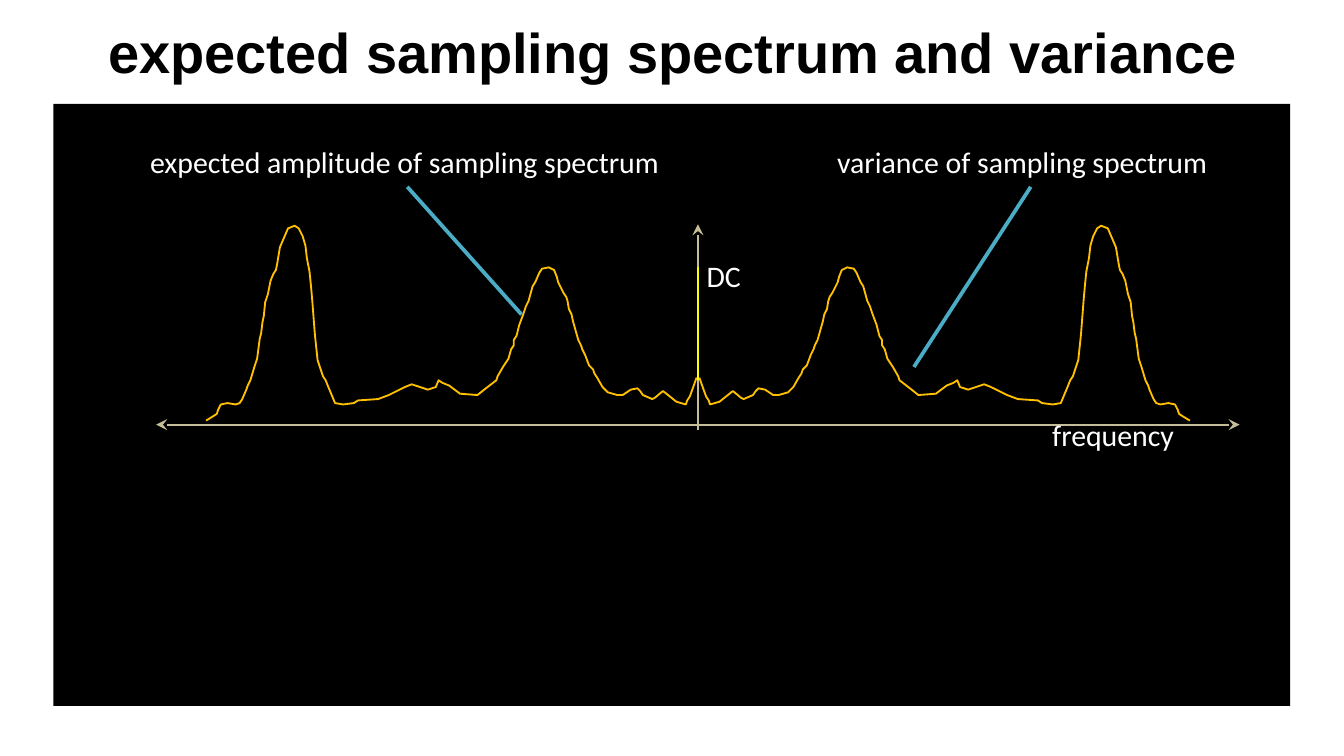
from pptx import Presentation
from pptx.dml.color import RGBColor
from pptx.enum.shapes import MSO_CONNECTOR, MSO_SHAPE
from pptx.enum.text import MSO_ANCHOR, PP_ALIGN
from pptx.oxml.ns import qn
from pptx.util import Pt
from lxml.etree import SubElement

BLACK = RGBColor(0x00, 0x00, 0x00)
WHITE = RGBColor(0xFF, 0xFF, 0xFF)
TAN = RGBColor(0xC4, 0xBD, 0x97)
AMBER = RGBColor(0xFF, 0xC0, 0x00)
YELLOW = RGBColor(0xFF, 0xFF, 0x00)
TEAL = RGBColor(0x4B, 0xAC, 0xC6)

TITLE = "expected sampling spectrum and variance"
LABELS = [
    ("expected amplitude of sampling spectrum", 73.4, 73.4, 290.2),
    ("variance of sampling spectrum", 441.4, 73.4, 222.5),
    ("frequency", 556.6, 219.6, 80.6),
    ("DC", 371.5, 134.6, 33.1),
]
POINTERS = [(218.2, 100.1, 279.4, 168.5), (552.2, 100.1, 489.6, 196.6)]

AXIS_X, BASE_Y = 373.9, 227.5
AXIS_REACH, AXIS_OVERLAP = 290.2, 5.8
UNIT = 0.72
# Distance from the axis and height above the base, in units
SPECTRUM = [
    (1, 35), (6, 21), (8, 18), (9, 15), (16, 17), (21, 21), (26, 25), (32, 20),
    (34, 19), (41, 22), (43, 25), (45, 27), (50, 26), (53, 24), (56, 22),
    (60, 22), (67, 24), (71, 28), (75, 35), (77, 38), (78, 41), (81, 44),
    (84, 52), (86, 56), (87, 59), (89, 63), (93, 77), (94, 82), (96, 86),
    (97, 92), (98, 95), (100, 98), (104, 106), (105, 110), (107, 115),
    (111, 117), (116, 116), (118, 113), (121, 106), (123, 103), (126, 92),
    (128, 88), (130, 82), (133, 74), (135, 66), (137, 63), (137, 59),
    (139, 56), (141, 49), (145, 43), (149, 36), (150, 33), (159, 26),
    (164, 22), (177, 23), (185, 29), (190, 31), (193, 33), (195, 28),
    (201, 26), (210, 29), (213, 30), (218, 28), (224, 25), (230, 22),
    (238, 19), (253, 18), (256, 16), (264, 15), (270, 16), (275, 28),
    (277, 33), (279, 36), (280, 39), (283, 48), (285, 67), (287, 93),
    (288, 104), (289, 114), (291, 124), (292, 133), (294, 140), (297, 146),
    (300, 148), (305, 146), (308, 139), (311, 132), (312, 126), (313, 120),
    (314, 115), (316, 112), (318, 107), (320, 97), (321, 94), (322, 91),
    (323, 81), (324, 76), (325, 68), (326, 64), (328, 49), (330, 43),
    (333, 33), (335, 29), (336, 26), (339, 19), (341, 16), (344, 15),
    (350, 16), (355, 15), (357, 11), (358, 8), (361, 6), (366, 3),
]


def add_text(shapes, text, box, size, font, color):
    tf = shapes.add_textbox(*map(Pt, box)).text_frame
    p = tf.paragraphs[0]
    p.text = text
    p.font.size, p.font.name = Pt(size), font
    p.font.color.rgb = color
    return tf


def add_line(shapes, ends, color, width, arrow=False):
    line = shapes.add_connector(MSO_CONNECTOR.STRAIGHT, *map(Pt, ends))
    line.line.color.rgb, line.line.width = color, Pt(width)
    if arrow:
        SubElement(line.line._get_or_add_ln(), qn("a:tailEnd"), type="stealth")
    SubElement(line._element.spPr, qn("a:effectLst"))


def add_spectrum(shapes, side):
    points = [(Pt(AXIS_X + side * x * UNIT), Pt(BASE_Y - y * UNIT)) for x, y in SPECTRUM]
    builder = shapes.build_freeform(*points[0])
    builder.add_line_segments(points[1:], close=False)
    curve = builder.convert_to_shape()
    curve.shadow.inherit = False
    curve.fill.background()
    curve.line.color.rgb, curve.line.width = AMBER, Pt(1)


prs = Presentation()
prs.slide_width, prs.slide_height = Pt(720), Pt(405)
s = prs.slides.add_slide(prs.slide_layouts[6])

panel = s.shapes.add_shape(MSO_SHAPE.RECTANGLE, Pt(28.6), Pt(55.6), Pt(662.6), Pt(322.6))
panel.shadow.inherit = False
panel.fill.solid()
panel.fill.fore_color.rgb = BLACK
panel.line.fill.background()

title = add_text(s.shapes, TITLE, (45.9, 2.9, 629.3, 49), 30, "Arial", BLACK)
title.word_wrap = True
title.vertical_anchor = MSO_ANCHOR.MIDDLE
title.paragraphs[0].alignment = PP_ALIGN.CENTER
title.paragraphs[0].font.bold = True

axes = s.shapes.add_group_shape().shapes
add_line(axes, (AXIS_X, 230.4, AXIS_X, 120.2), TAN, 1, arrow=True)
for side in (1, -1):
    ends = (AXIS_X - side * AXIS_OVERLAP, BASE_Y, AXIS_X + side * AXIS_REACH, BASE_Y)
    add_line(axes, ends, TAN, 1, arrow=True)

curves = s.shapes.add_group_shape().shapes
for side in (-1, 1):
    add_spectrum(curves, side)
add_line(curves, (AXIS_X, 203.8, AXIS_X, 143.3), YELLOW, 1)

for ends in POINTERS:
    add_line(s.shapes, ends, TEAL, 2)
for text, left, top, width in LABELS:
    add_text(s.shapes, text, (left, top, width, 26.6), 16, "Calibri", WHITE).word_wrap = False

prs.save("out.pptx")
